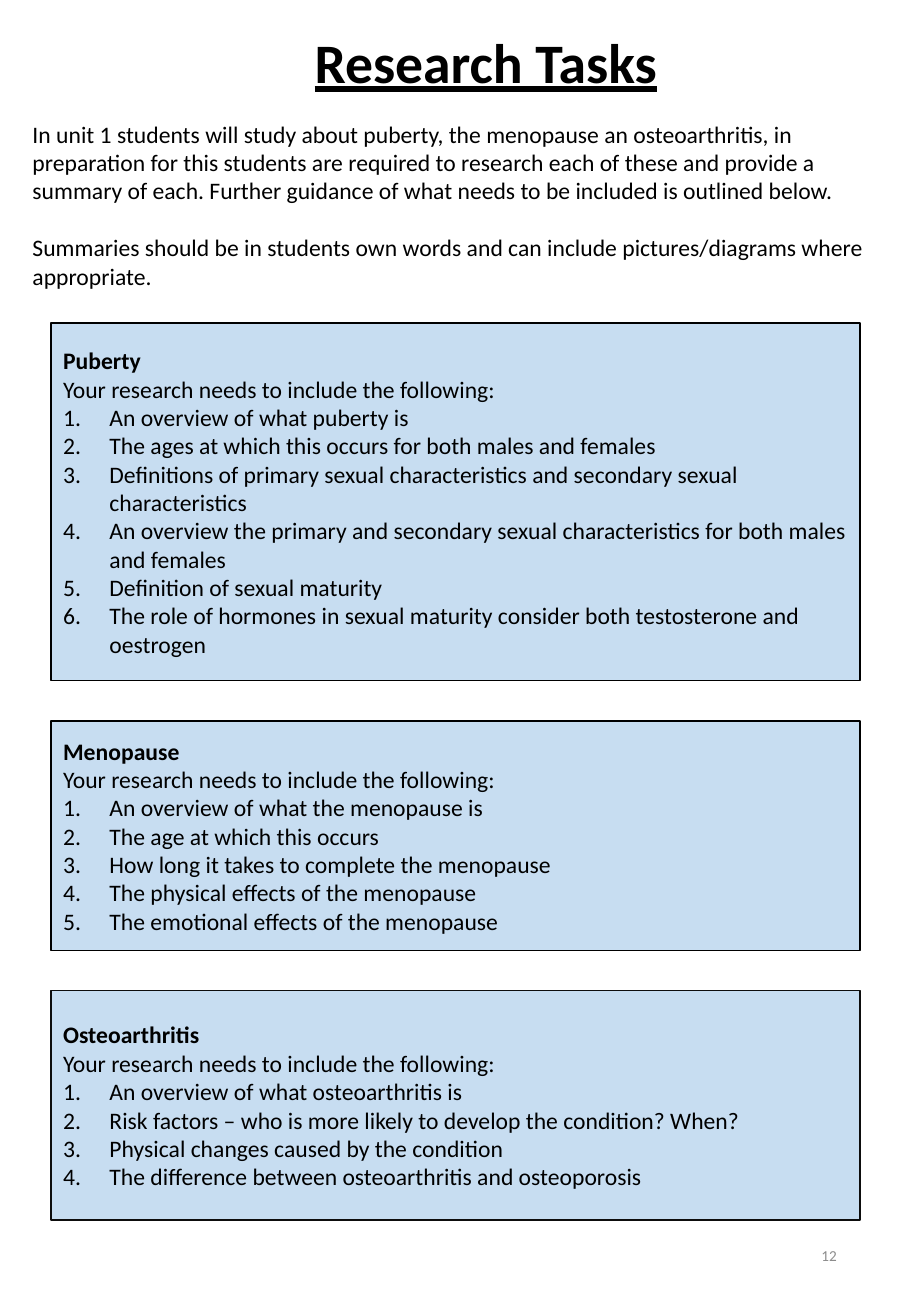
from pptx import Presentation
from pptx.dml.color import RGBColor
from pptx.enum.shapes import MSO_SHAPE as SHAPE
from pptx.enum.text import MSO_ANCHOR as ANCHOR, PP_ALIGN as ALIGN
from pptx.oxml.ns import qn
from pptx.util import Cm, Pt
from lxml.etree import SubElement

BLACK = RGBColor(0x00, 0x00, 0x00)
NEAR_BLACK = RGBColor(0x0D, 0x0D, 0x0D)
GREY = RGBColor(0x8C, 0x8C, 0x8C)
PALE_BLUE = RGBColor(0xC7, 0xDD, 0xF1)

BODY = {"name": "Calibri", "size": Pt(14), "bold": False}
HEADING = {**BODY, "bold": True}
TITLE = {**HEADING, "size": Pt(33), "underline": True}
PAGE = {**BODY, "size": Pt(9)}

BOX_LEFT, BOX_WIDTH, BOX_GAP = Cm(1.07), Cm(16.92), Cm(0.84)
INDENT = Cm(0.97)

INTRO = [
    ("Research Tasks", TITLE, 0),
    ("In unit 1 students will study about puberty, the menopause an osteoarthritis, in "
     "preparation for this students are required to research each of these and provide a "
     "summary of each. Further guidance of what needs to be included is outlined below.", BODY, 14.6),
    ("Summaries should be in students own words and can include pictures/diagrams where "
     "appropriate.", BODY, 17.1),
]
LEAD_IN = "Your research needs to include the following:"
TOPICS = [
    ("Puberty", Cm(7.47), BLACK, [
        "An overview of what puberty is",
        "The ages at which this occurs for both males and females",
        "Definitions of primary sexual characteristics and secondary sexual characteristics",
        "An overview the primary and secondary sexual characteristics for both males and females",
        "Definition of sexual maturity",
        "The role of hormones in sexual maturity consider both testosterone and oestrogen",
    ]),
    ("Menopause", Cm(4.8), BLACK, [
        "An overview of what the menopause is",
        "The age at which this occurs",
        "How long it takes to complete the menopause",
        "The physical effects of the menopause",
        "The emotional effects of the menopause",
    ]),
    ("Osteoarthritis", Cm(4.8), NEAR_BLACK, [
        "An overview of what osteoarthritis is",
        "Risk factors – who is more likely to develop the condition? When?",
        "Physical changes caused by the condition",
        "The difference between osteoarthritis and osteoporosis",
    ]),
]


def add_paragraph(tf, text, fmt, color=BLACK, align=ALIGN.LEFT):
    p = tf.paragraphs[0] if not tf.text else tf.add_paragraph()
    p.alignment = align
    r = p.add_run()
    r.text = text
    for name, value in fmt.items():
        setattr(r.font, name, value)
    r.font.color.rgb = color
    return p


prs = Presentation()
prs.slide_width, prs.slide_height = Cm(19.05), Cm(27.51)
s = prs.slides.add_slide(prs.slide_layouts[6])

tf = s.shapes.add_textbox(Cm(13.46), Cm(25.5), Cm(4.29), Cm(1.47)).text_frame
tf.word_wrap = True
tf.vertical_anchor = ANCHOR.MIDDLE
add_paragraph(tf, "12", PAGE, GREY, ALIGN.RIGHT)

tf = s.shapes.add_textbox(Cm(0.43), Cm(0.46), Cm(18.19), Cm(8.08)).text_frame
tf.word_wrap = True
tf.vertical_anchor = ANCHOR.TOP
for text, fmt, gap in INTRO:
    p = add_paragraph(tf, text, fmt)
    if gap:
        p.space_before = Pt(gap)
title = tf.paragraphs[0]
title.alignment = ALIGN.CENTER
title._p.get_or_add_pPr().set("indent", str(Cm(1.27)))

top = Cm(6.76)
for topic, height, line_color, tasks in TOPICS:
    sp = s.shapes.add_shape(SHAPE.RECTANGLE, BOX_LEFT, top, BOX_WIDTH, height)
    sp.shadow.inherit = False
    sp.fill.solid()
    sp.fill.fore_color.rgb = PALE_BLUE
    sp.line.color.rgb = line_color
    sp.line.width = Pt(1)
    tf = sp.text_frame
    tf.word_wrap = True
    tf.vertical_anchor = ANCHOR.MIDDLE
    add_paragraph(tf, topic, HEADING)
    add_paragraph(tf, LEAD_IN, BODY)
    for task in tasks:
        pPr = add_paragraph(tf, task, BODY)._p.get_or_add_pPr()
        pPr.set("marL", str(INDENT))
        pPr.set("indent", str(-INDENT))
        SubElement(pPr, qn("a:buFont"), typeface="+mj-lt")
        SubElement(pPr, qn("a:buAutoNum"), type="arabicPeriod")
    top += height + BOX_GAP

prs.save("out.pptx")
